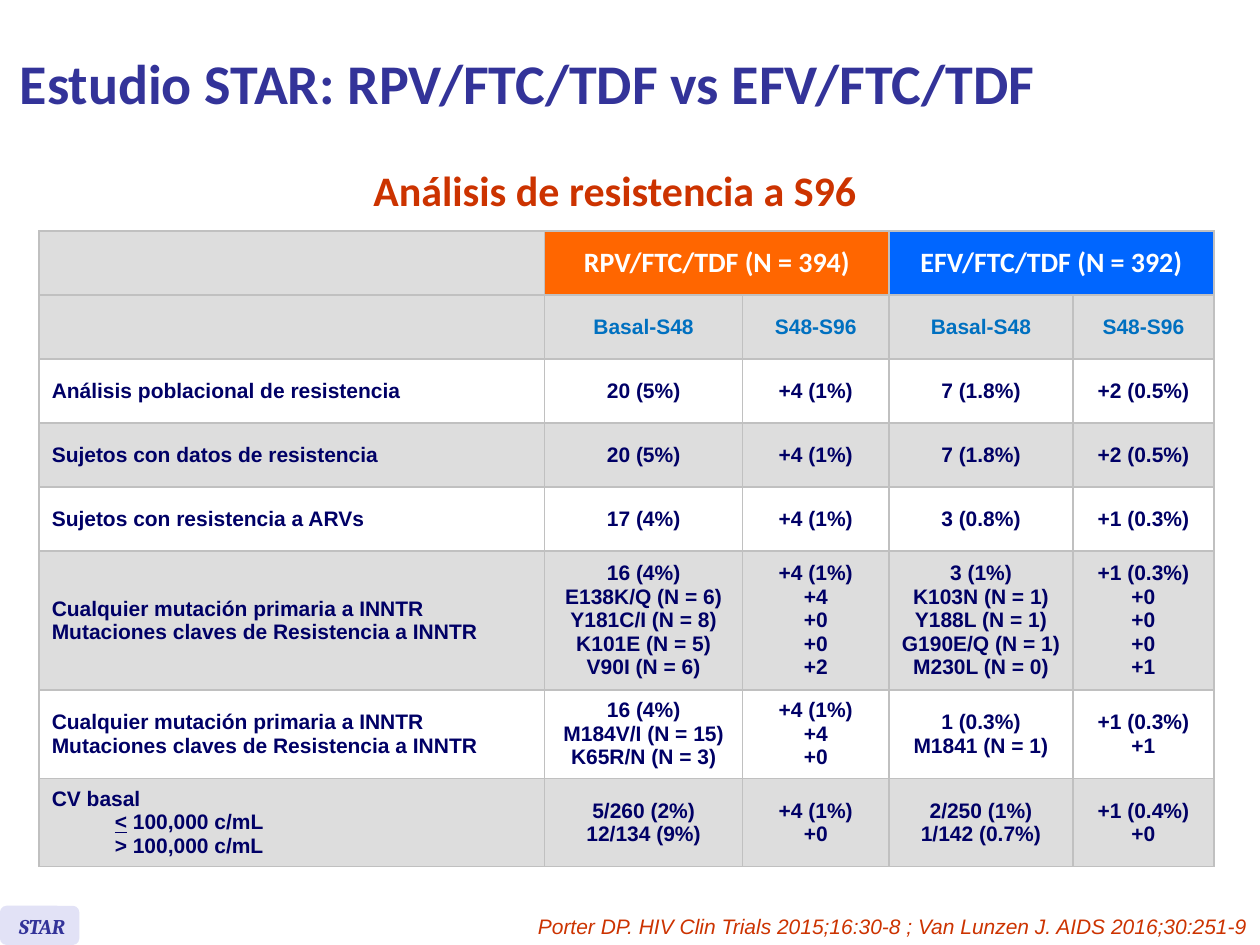
from pptx import Presentation
from pptx.dml.color import RGBColor
from pptx.enum.shapes import MSO_SHAPE as Shape
from pptx.enum.text import MSO_ANCHOR as Anchor, PP_ALIGN as Align
from pptx.oxml import parse_xml
from pptx.oxml.ns import nsdecls
from pptx.util import Cm, Pt

# Content: "\n" starts a paragraph, "\v" breaks a line
HEADING = "Estudio STAR: RPV/FTC/TDF vs EFV/FTC/TDF"
TITLE = "Análisis de resistencia a S96"
CITATION = "Porter DP. HIV Clin Trials 2015;16:30-8 ; Van Lunzen J. AIDS 2016;30:251-9"
STUDY = "STAR"
INNTR = "Cualquier mutación primaria a INNTR\nMutaciones claves de Resistencia a INNTR"
ROWS = [
    ("", "RPV/FTC/TDF (N = 394)", "", "EFV/FTC/TDF (N = 392)", ""),
    ("", "Basal-S48", "S48-S96", "Basal-S48", "S48-S96"),
    ("Análisis poblacional de resistencia", "20 (5%)", "+4 (1%)", "7 (1.8%)", "+2 (0.5%)"),
    ("Sujetos con datos de resistencia", "20 (5%)", "+4 (1%)", "7 (1.8%)", "+2 (0.5%)"),
    ("Sujetos con resistencia a ARVs", "17 (4%)", "+4 (1%)", "3 (0.8%)", "+1 (0.3%)"),
    (INNTR,
     "16 (4%)\nE138K/Q (N = 6)\vY181C/I (N = 8)\nK101E (N = 5)\nV90I (N = 6)",
     "+4 (1%)\n+4\n+0\n+0\n+2",
     "3 (1%)\nK103N (N = 1)\vY188L (N = 1)\vG190E/Q (N = 1)\nM230L (N = 0)",
     "+1 (0.3%)\n+0\n+0\n+0\n+1"),
    (INNTR, "16 (4%)\nM184V/I (N = 15)\vK65R/N (N = 3)", "+4 (1%)\n+4\n+0",
     "1 (0.3%)\nM1841 (N = 1)", "+1 (0.3%)\n+1"),
    ("CV basal\n< 100,000 c/mL\n> 100,000 c/mL", "5/260 (2%)\v12/134 (9%)",
     "+4 (1%)\n+0", "2/250 (1%)\v1/142 (0.7%)", "+1 (0.4%)\n+0"),
]
COLUMN_WIDTHS = [10.19, 3.99, 2.95, 3.71, 2.84]
ROW_HEIGHTS = [1.29] * 5 + [2.8, 1.78, 1.78]
ARM_FILLS = {1: "FF6600", 3: "0066FF"}
GREY, WHITE, BORDER = "DDDDDD", "FFFFFF", "C0C0C0"
NAVY, INDIGO, RED, BLUE = "000066", "333399", "CC3300", "0070C0"


def color(value):
    return RGBColor.from_string(value)


def style(frame, size, name, tone, align=Align.LEFT, bold=False, italic=False):
    for paragraph in frame.paragraphs:
        paragraph.alignment = align
        font = paragraph.font
        font.size, font.name, font.bold, font.italic = Pt(size), name, bold, italic
        font.color.rgb = color(tone)


def place(shape, left, top, width, height):
    shape.left, shape.top, shape.width, shape.height = map(Cm, (left, top, width, height))


def add_text(slide, text, box, anchor=Anchor.TOP, **look):
    frame = slide.shapes.add_textbox(*map(Cm, box)).text_frame
    frame.word_wrap, frame.vertical_anchor = True, anchor
    frame.text = text
    style(frame, **look)


def add_borders(cell):
    properties = cell._tc.get_or_add_tcPr()
    for side in "LRTB":
        properties.append(parse_xml(
            f'<a:ln{side} {nsdecls("a")} w="12700"><a:solidFill>'
            f'<a:srgbClr val="{BORDER}"/></a:solidFill></a:ln{side}>'))


def cell_fill(row, column):
    if row == 0:
        return ARM_FILLS.get(column, GREY)
    return WHITE if row in (2, 4, 6) else GREY


def add_table(slide):
    table = slide.shapes.add_table(
        len(ROWS), len(COLUMN_WIDTHS), Cm(0.79), Cm(4.66),
        Cm(sum(COLUMN_WIDTHS)), Cm(sum(ROW_HEIGHTS))).table
    table.first_row = table.horz_banding = False
    for column, width in zip(table.columns, COLUMN_WIDTHS):
        column.width = Cm(width)
    for row, height in zip(table.rows, ROW_HEIGHTS):
        row.height = Cm(height)
    for column in ARM_FILLS:
        table.cell(0, column).merge(table.cell(0, column + 1))

    for i, texts in enumerate(ROWS):
        for j, text in enumerate(texts):
            cell = table.cell(i, j)
            add_borders(cell)
            cell.fill.solid()
            cell.fill.fore_color.rgb = color(cell_fill(i, j))
            cell.vertical_anchor = Anchor.MIDDLE
            if not text:
                continue
            cell.text = text
            size, name, tone = (16, "Calibri", WHITE) if i == 0 else (
                12, "Arial", BLUE if i == 1 else NAVY)
            style(cell.text_frame, size, name, tone,
                  Align.CENTER if j else Align.LEFT, bold=True)
    return table


def indent_viral_loads(cell):
    low, high = cell.text_frame.paragraphs[1:]
    for paragraph in (low, high):
        paragraph.level = 1
        paragraph._p.get_or_add_pPr().set("marL", str(Cm(1.27)))
    # The underlined sign stands for "less than or equal"
    sign = low.runs[0]
    rest = low.add_run()
    sign.text, rest.text = sign.text[:1], sign.text[1:]
    sign.font.underline = True


def main():
    presentation = Presentation()
    presentation.slide_width, presentation.slide_height = Cm(25.4), Cm(19.05)
    slide = presentation.slides.add_slide(presentation.slide_layouts[5])

    # Titles
    title = slide.shapes.title
    place(title, 4.6, 3, 15.6, 1.63)
    title.text_frame.text = TITLE
    title.text_frame.vertical_anchor = Anchor.MIDDLE
    style(title.text_frame, 24, "Calibri", RED, Align.CENTER, bold=True)
    add_text(slide, HEADING, (0.15, 0.13, 24.26, 3.07), Anchor.MIDDLE,
             size=32, name="Calibri", tone=INDIGO, bold=True)

    # Resistance table
    table = add_table(slide)
    indent_viral_loads(table.cell(len(ROWS) - 1, 0))

    # Footer
    add_text(slide, CITATION, (9.25, 18.29, 16.15, 0.76),
             size=12, name="Arial", tone=RED, align=Align.RIGHT, italic=True)
    badge = slide.shapes.add_shape(Shape.ROUNDED_RECTANGLE, 0, Cm(18.26), Cm(1.6), Cm(0.79))
    badge.shadow.inherit = False
    badge.fill.solid()
    badge.fill.fore_color.rgb = color("E2E2F6")
    badge.line.fill.background()
    add_text(slide, STUDY, (0.13, 18.29, 1.55, 0.76),
             size=12, name="Cambria", tone=INDIGO, bold=True, italic=True)

    presentation.save("out.pptx")


if __name__ == "__main__":
    main()
